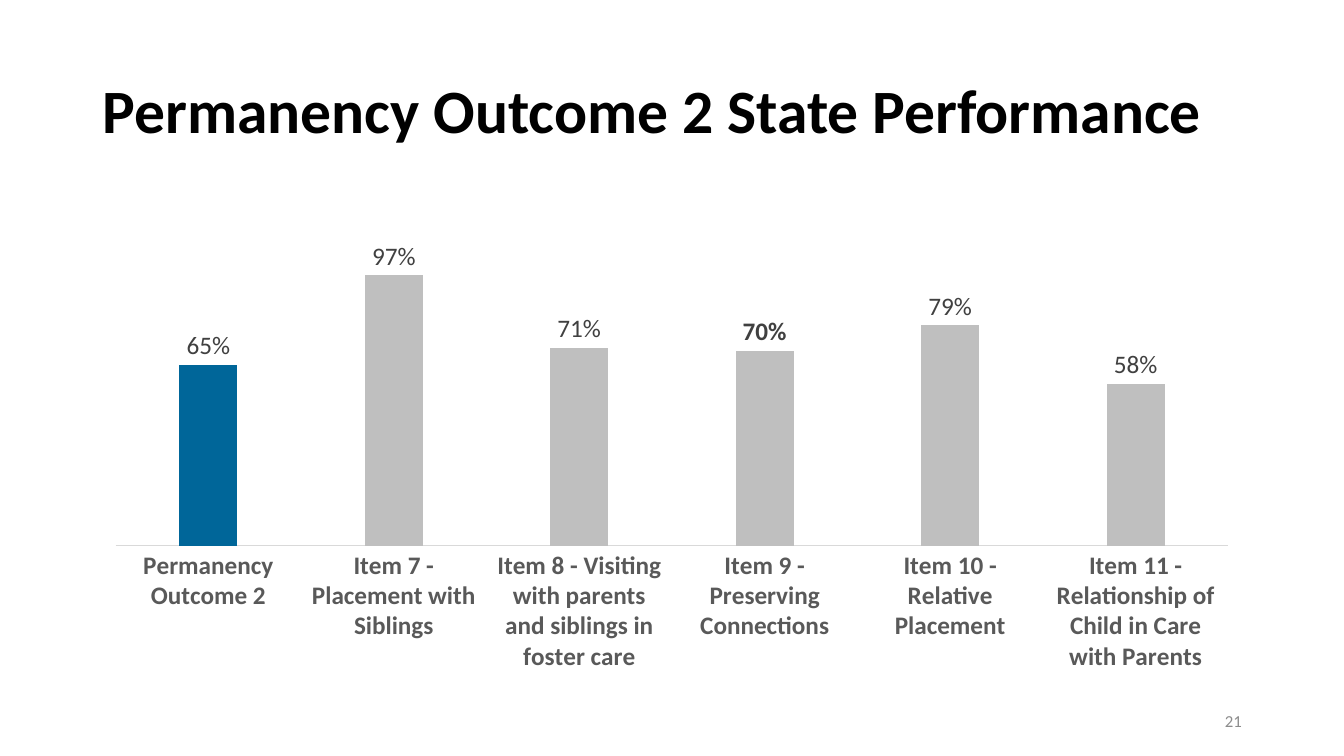
from pptx import Presentation
from pptx.chart.data import CategoryChartData
from pptx.dml.color import RGBColor
from pptx.enum import chart as ch, text
from pptx.util import Cm, Pt

FONT = "Calibri"
LEFT, WIDTH = Cm(2.33), Cm(29.21)
BARS = [
    ("Permanency Outcome 2", 0.65),
    ("Item 7 - Placement with Siblings", 0.97),
    ("Item 8 - Visiting with parents and siblings in foster care", 0.71),
    ("Item 9 - Preserving Connections", 0.70),
    ("Item 10 - Relative Placement", 0.79),
    ("Item 11 - Relationship of Child in Care with Parents", 0.58),
]
OUTCOME_BAR, BOLD_LABEL_BAR = 0, 3


def rgb(colour):
    return RGBColor.from_string(colour)


def style_font(font, size, colour, bold=False):
    font.name, font.size, font.bold = FONT, Pt(size), bold
    font.color.rgb = rgb(colour)


def set_fill(fill, colour):
    fill.solid()
    fill.fore_color.rgb = rgb(colour)


def set_title(slide, words):
    sp = slide.shapes.title
    sp.left, sp.top, sp.width, sp.height = LEFT, Cm(1.01), WIDTH, Cm(3.68)
    tf = sp.text_frame
    tf.text = words
    tf.vertical_anchor = text.MSO_ANCHOR.MIDDLE
    p = tf.paragraphs[0]
    p.alignment = text.PP_ALIGN.LEFT
    p.line_spacing = 0.9
    style_font(p.font, 44, "000000", True)


def add_page_number(slide, number):
    sp = slide.shapes.add_textbox(Cm(23.93), Cm(17.65), Cm(7.62), Cm(1.02))
    tf = sp.text_frame
    tf.word_wrap = True
    tf.vertical_anchor = text.MSO_ANCHOR.MIDDLE
    p = tf.paragraphs[0]
    p.text = number
    p.alignment = text.PP_ALIGN.RIGHT
    style_font(p.font, 12, "8C8C8C")


def format_axes(chart):
    axis = chart.category_axis
    axis.major_tick_mark = ch.XL_TICK_MARK.NONE
    axis.format.line.color.rgb = rgb("D9D9D9")
    axis.format.line.width = Pt(0.75)
    style_font(axis.tick_labels.font, 18, "595959", True)

    axis = chart.value_axis
    axis.minimum_scale, axis.maximum_scale = 0, 1.2
    axis.has_major_gridlines = False
    axis.visible = False


def format_bars(plot):
    plot.gap_width, plot.overlap = 219, -27
    plot.vary_by_categories = False
    series = plot.series[0]
    set_fill(series.format.fill, "BFBFBF")
    set_fill(series.points[OUTCOME_BAR].format.fill, "006699")

    labels = series.data_labels
    labels.show_value = True
    labels.number_format, labels.number_format_is_linked = "0%", False
    labels.position = ch.XL_LABEL_POSITION.OUTSIDE_END
    style_font(labels.font, 18, "404040")

    label = series.points[BOLD_LABEL_BAR].data_label
    style_font(label.font, 18, "404040", True)
    label.position = ch.XL_LABEL_POSITION.OUTSIDE_END


def add_bar_chart(slide):
    data = CategoryChartData(number_format="0%")
    data.categories = [name for name, _ in BARS]
    data.add_series("Series 1", [value for _, value in BARS])
    chart = slide.shapes.add_chart(
        ch.XL_CHART_TYPE.COLUMN_CLUSTERED,
        LEFT, Cm(5.08), WIDTH, Cm(12.09), data).chart
    chart.has_title = chart.has_legend = False
    style_font(chart.font, 10, "000000")
    format_axes(chart)
    format_bars(chart.plots[0])


def main():
    prs = Presentation()
    prs.slide_width, prs.slide_height = Cm(33.87), Cm(19.05)
    slide = prs.slides.add_slide(prs.slide_layouts.get_by_name("Title Only"))
    set_title(slide, "Permanency Outcome 2 State Performance")
    add_bar_chart(slide)
    add_page_number(slide, "21")
    prs.save("out.pptx")


if __name__ == "__main__":
    main()
